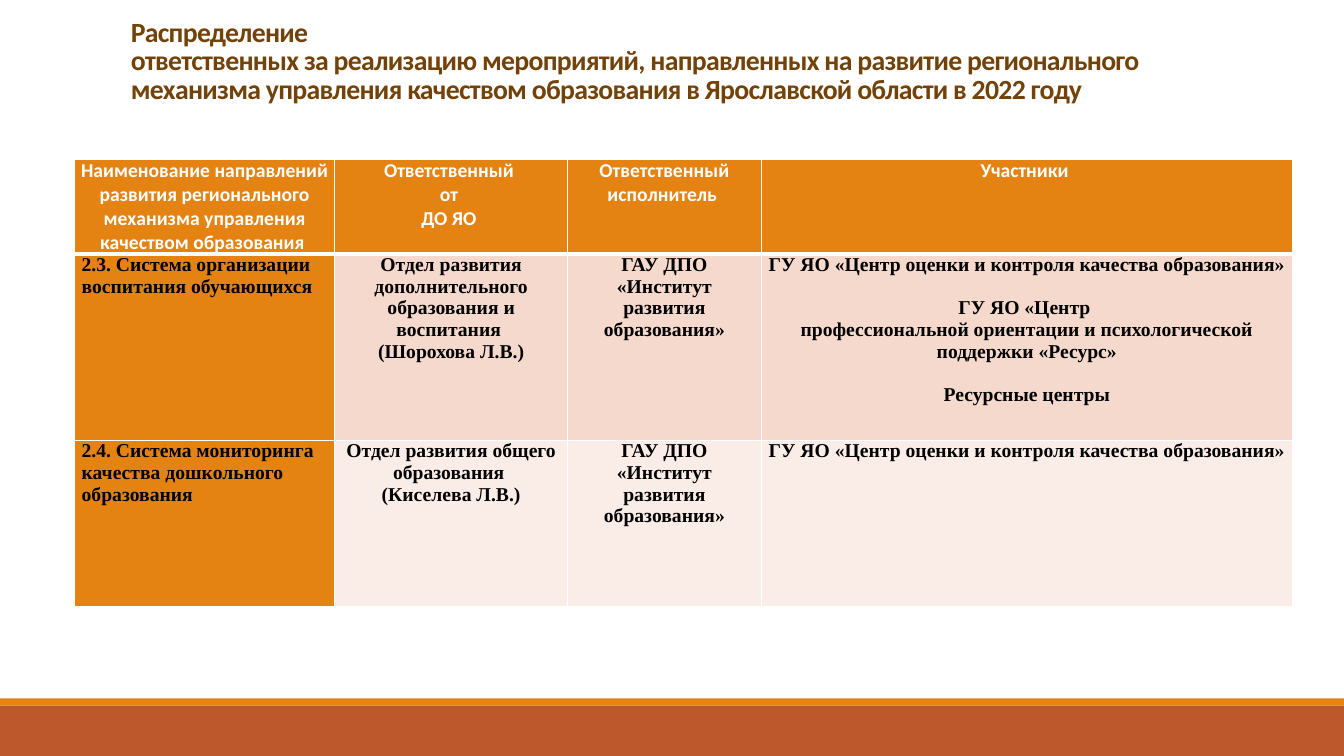
import pptx
import pptx.dml.color
import pptx.enum.shapes
import pptx.enum.text
import pptx.oxml
import pptx.oxml.ns
import pptx.util
from pptx.util import Inches

RGBColor = pptx.dml.color.RGBColor
PP_ALIGN = pptx.enum.text.PP_ALIGN
ORANGE = RGBColor(0xE4, 0x83, 0x12)
RUST = RGBColor(0xBD, 0x58, 0x2C)
BROWN = RGBColor(0x72, 0x42, 0x09)
PEACH = RGBColor(0xF5, 0xD9, 0xCC)
PALE = RGBColor(0xFA, 0xED, 0xE7)
WHITE = RGBColor(0xFF, 0xFF, 0xFF)
BLACK = RGBColor(0, 0, 0)

TITLE = [
    "Распределение",
    "ответственных за реализацию мероприятий, направленных на развитие регионального "
    "механизма управления качеством образования в Ярославской области в 2022 году",
]
COLS = [2.58, 2.31, 1.92, 5.27]
ROWS = [0.94, 1.85, 1.65]
GAP = "gap"  # the next paragraph starts one line lower
INSTITUTE = ["ГАУ ДПО «Институт развития образования»"]
CENTRE = "ГУ ЯО «Центр оценки и контроля качества образования»"
CELLS = [
    [
        ["Наименование направлений развития регионального механизма управления "
         "качеством образования "],
        ["Ответственный ", "от ", "ДО ЯО "],
        ["Ответственный", "исполнитель "],
        ["Участники "],
    ],
    [
        ["2.3. Система организации воспитания обучающихся"],
        ["Отдел развития дополнительного образования и воспитания ", "(Шорохова Л.В.)"],
        INSTITUTE,
        [CENTRE, GAP, "ГУ ЯО «Центр ",
         "профессиональной ориентации и психологической поддержки «Ресурс»",
         GAP, "Ресурсные центры"],
    ],
    [
        ["2.4. Система мониторинга качества дошкольного образования"],
        ["Отдел развития общего образования ", "(Киселева Л.В.)"],
        INSTITUTE,
        [CENTRE],
    ],
]


class SlideBuilder:
    head_font, body_font = "Calibri", "Times New Roman"
    cell_size, line_height = 14, 15.5

    def __init__(self, slide):
        self.s = slide

    def bar(self, top, height, color):
        sp = self.s.shapes.add_shape(
            pptx.enum.shapes.MSO_SHAPE.RECTANGLE,
            0, Inches(top), Inches(13.33), Inches(height))
        sp.shadow.inherit = False
        sp.fill.solid()
        sp.fill.fore_color.rgb = color
        sp.line.fill.background()

    def run(self, p, text, font, size, color):
        r = p.add_run()
        r.text = text
        r.font.name = font
        r.font.size = pptx.util.Pt(size)
        r.font.bold = True
        r.font.color.rgb = color
        return r

    def title(self, lines, left, top, width, height):
        tf = self.s.shapes.add_textbox(
            Inches(left), Inches(top), Inches(width), Inches(height)).text_frame
        tf.word_wrap = True
        p = tf.paragraphs[0]
        p.line_spacing = 0.85
        for i, line in enumerate(lines):
            if i:
                p.add_line_break()
            r = self.run(p, line, self.head_font, 19.8, BROWN)
            r.font._element.set("spc", "-50")

    def border(self, cell, side, width):
        tc_pr = cell._tc.get_or_add_tcPr()
        tc_pr.append(pptx.oxml.parse_xml(
            f'<a:ln{side} {pptx.oxml.ns.nsdecls("a")} w="{pptx.util.Pt(width)}">'
            f'<a:solidFill><a:srgbClr val="{WHITE}"/></a:solidFill></a:ln{side}>'))

    def cell(self, cell, paragraphs, row, col):
        header = row == 0
        cell.margin_left = cell.margin_right = Inches(0.06 if header else 0.07)
        cell.margin_top = cell.margin_bottom = 0
        thick = {"T": row == 1, "B": header}
        for side in "LRTB":
            self.border(cell, side, 3 if thick.get(side) else 1)
        cell.fill.solid()
        cell.fill.fore_color.rgb = ORANGE if header or col == 0 else (PEACH, PALE)[row - 1]

        tf = cell.text_frame
        p, gap = tf.paragraphs[0], False
        for i, text in enumerate(paragraphs):
            if text == GAP:
                gap = True
                continue
            if i:
                p = tf.add_paragraph()
            p.alignment = PP_ALIGN.CENTER if header or col else PP_ALIGN.LEFT
            if gap:
                p.space_before = pptx.util.Pt(self.line_height)
                gap = False
            self.run(p, text, self.head_font if header else self.body_font,
                     self.cell_size, WHITE if header else BLACK)

    def table(self, cells, left, top):
        tbl = self.s.shapes.add_table(
            len(ROWS), len(COLS), Inches(left), Inches(top),
            Inches(sum(COLS)), Inches(sum(ROWS))).table
        tbl.horz_banding = False
        for column, width in zip(tbl.columns, COLS):
            column.width = Inches(width)
        for row, height in zip(tbl.rows, ROWS):
            row.height = Inches(height)
        for i, row in enumerate(cells):
            for j, paragraphs in enumerate(row):
                self.cell(tbl.cell(i, j), paragraphs, i, j)


def main():
    prs = pptx.Presentation()
    prs.slide_width, prs.slide_height = Inches(13.33), Inches(7.5)
    page = SlideBuilder(prs.slides.add_slide(prs.slide_layouts[6]))

    # Footer bands
    page.bar(7, 0.5, RUST)
    page.bar(6.93, 0.07, ORANGE)

    # Heading
    page.title(TITLE, 1.2, 0.15, 11, 1)

    # Responsibilities table
    page.table(CELLS, 0.74, 1.58)

    prs.save("out.pptx")


if __name__ == "__main__":
    main()
